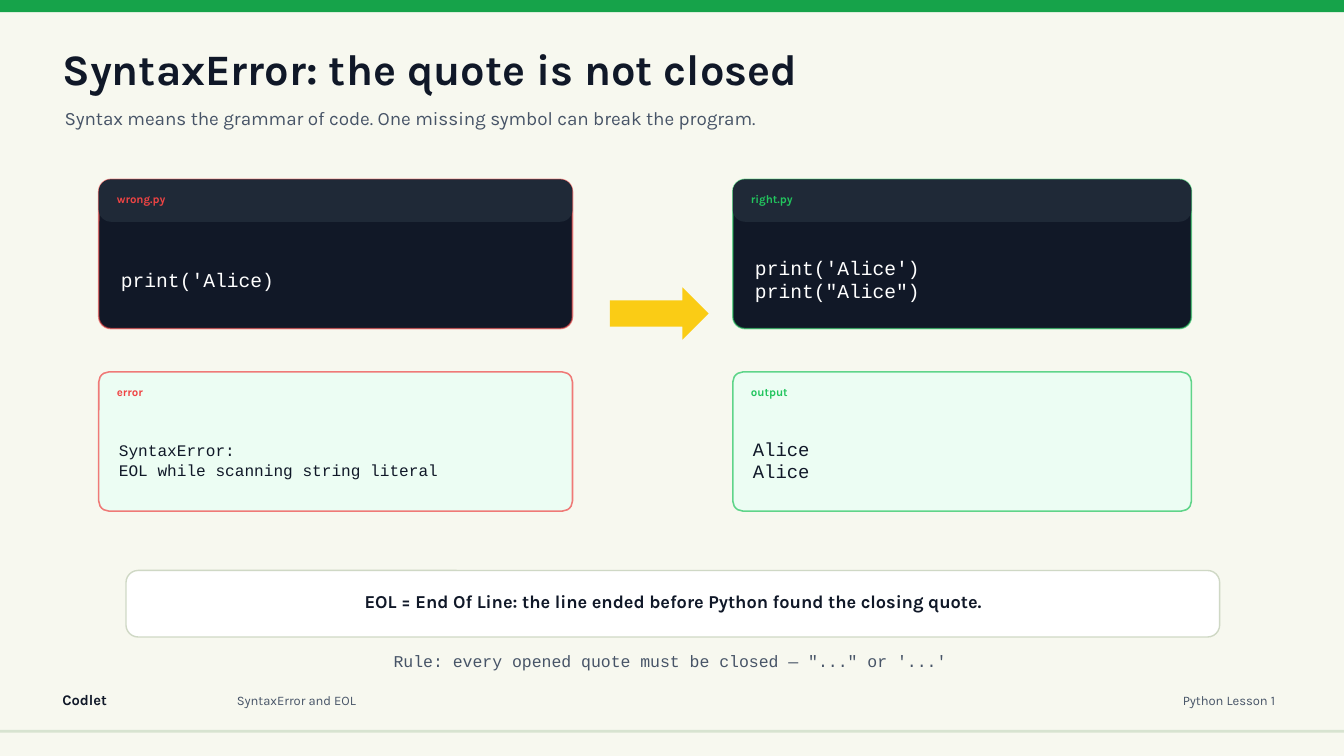
from lxml import etree
from pptx import Presentation
from pptx.dml.color import RGBColor
from pptx.enum import shapes, text
from pptx.oxml import ns
from pptx.util import Pt

CREAM = RGBColor(0xF7, 0xF8, 0xEF)
GREEN = RGBColor(0x16, 0xA3, 0x4A)
SAGE = RGBColor(0xD7, 0xE3, 0xD0)
INK = RGBColor(0x10, 0x18, 0x28)
SLATE = RGBColor(0x47, 0x54, 0x67)
NIGHT = RGBColor(0x11, 0x18, 0x27)
HEADER = RGBColor(0x1F, 0x29, 0x37)
RED = RGBColor(0xEF, 0x44, 0x44)
LIME = RGBColor(0x22, 0xC5, 0x5E)
MINT = RGBColor(0xEC, 0xFD, 0xF3)
YELLOW = RGBColor(0xFA, 0xCC, 0x15)
WHITE = RGBColor(0xFF, 0xFF, 0xFF)
NOTE_LINE = RGBColor(0xCB, 0xD5, 0xC0)

SANS = "Karla"
MONO = "Courier New"
LEFT, CENTER, RIGHT = text.PP_ALIGN.LEFT, text.PP_ALIGN.CENTER, text.PP_ALIGN.RIGHT


def write(holder, content, size, color, font=SANS, bold=False, align=LEFT):
    """Fill a text holder, one paragraph per line of content."""
    frame = holder.text_frame
    frame.word_wrap = True
    frame.auto_size = text.MSO_AUTO_SIZE.NONE
    frame.vertical_anchor = text.MSO_ANCHOR.MIDDLE
    frame.margin_left = frame.margin_right = frame.margin_top = frame.margin_bottom = 0
    for number, line in enumerate(content.split("\n")):
        paragraph = frame.add_paragraph() if number else frame.paragraphs[0]
        paragraph.alignment = align
        paragraph.space_before = Pt(0)
        run = paragraph.add_run()
        run.text = line
        run.font.name = font
        run.font.size = Pt(size)
        run.font.bold = bold
        run.font.color.rgb = color


def add_label(slide, box, content, size, color, **style):
    label = slide.shapes.add_textbox(*map(Pt, box))
    write(label, content, size, color, **style)


def fill_placeholder(holder, box, content, size, color, **style):
    holder.left, holder.top, holder.width, holder.height = map(Pt, box)
    write(holder, content, size, color, **style)


def add_block(slide, kind, box, fill):
    block = slide.shapes.add_shape(kind, *map(Pt, box))
    block.shadow.inherit = False
    block.fill.solid()
    block.fill.fore_color.rgb = fill
    block.line.fill.background()
    return block


def add_card(slide, box, fill, radius=8.64):
    card = add_block(slide, shapes.MSO_SHAPE.ROUNDED_RECTANGLE, box, fill)
    card.adjustments[0] = radius / min(box[2:])
    return card


def outline(card, color, width, opacity):
    """Draw a partly transparent border; opacity is in percent."""
    card.line.color.rgb = color
    card.line.width = Pt(width)
    rgb = card.line._ln.find(".//" + ns.qn("a:srgbClr"))
    etree.SubElement(rgb, ns.qn("a:alpha")).set("val", str(opacity * 1000))


def add_code_panel(slide, left, width, accent, filename, code):
    outline(add_card(slide, (left, 128.16, width, 106.56), NIGHT), accent, 1.1, 60)
    add_card(slide, (left, 128.16, width, 30.24), HEADER)
    add_label(slide, (left + 12.96, 136.8, width - 25.92, 10.08), filename, 8.2, accent, bold=True)
    add_label(slide, (left + 15.84, 171.36, width - 31.68, 56.16), code, 14, WHITE, font=MONO)


def add_result_panel(slide, left, width, accent, heading, result, size):
    outline(add_card(slide, (left, 265.68, width, 99.36), MINT, 7.2), accent, 1.1, 70)
    add_label(slide, (left + 12.96, 275.04, width - 25.92, 10.08), heading, 8.2, accent, bold=True)
    add_label(slide, (left + 14.4, 298.8, width - 28.8, 59.76), result, size, INK, font=MONO)


def add_footer(slide):
    add_label(slide, (44.64, 491.76, 86.4, 15.84), "Codlet", 10.5, INK, bold=True)
    add_label(slide, (169.2, 492.48, 468, 15.84), "SyntaxError and EOL", 9.3, SLATE)
    add_label(slide, (777.6, 492.48, 133.2, 15.84), "Python Lesson 1", 9.3, SLATE, align=RIGHT)


def main():
    deck = Presentation()
    deck.slide_width, deck.slide_height = Pt(960), Pt(540)
    slide = deck.slides.add_slide(deck.slide_layouts[0])
    slide.background.fill.solid()
    slide.background.fill.fore_color.rgb = CREAM

    add_block(slide, shapes.MSO_SHAPE.RECTANGLE, (0, 0, 960, 8.64), GREEN)
    add_block(slide, shapes.MSO_SHAPE.RECTANGLE, (0, 521.28, 960, 2.16), SAGE)
    add_footer(slide)

    fill_placeholder(slide.shapes.title, (44.64, 30.24, 604.8, 37.44),
                     "SyntaxError: the quote is not closed", 31, INK, bold=True)
    fill_placeholder(slide.placeholders[1], (46.08, 73.44, 763.2, 21.6),
                     "Syntax means the grammar of code. One missing symbol can break the program.",
                     13.5, SLATE)

    wrong = (70.56, 338.4, RED)
    right = (523.44, 327.6, LIME)
    add_code_panel(slide, *wrong, "wrong.py", "print('Alice)")
    add_result_panel(slide, *wrong, "error",
                     "SyntaxError:\nEOL while scanning string literal", 11.5)
    add_block(slide, shapes.MSO_SHAPE.RIGHT_ARROW, (435.6, 205.2, 70.56, 37.44), YELLOW)
    add_code_panel(slide, *right, "right.py", "print('Alice')\nprint(\"Alice\")")
    add_result_panel(slide, *right, "output", "Alice\nAlice", 13.5)

    outline(add_card(slide, (90, 407.52, 781.2, 47.52), WHITE), NOTE_LINE, 1, 90)
    add_label(slide, (111.6, 423.36, 738, 12.24),
              "EOL = End Of Line: the line ended before Python found the closing quote.",
              13, INK, bold=True, align=CENTER)
    add_label(slide, (144, 465.84, 669.6, 12.24),
              "Rule: every opened quote must be closed — \"...\" or '...'",
              11.8, SLATE, font=MONO, align=CENTER)

    deck.save("out.pptx")


if __name__ == "__main__":
    main()
